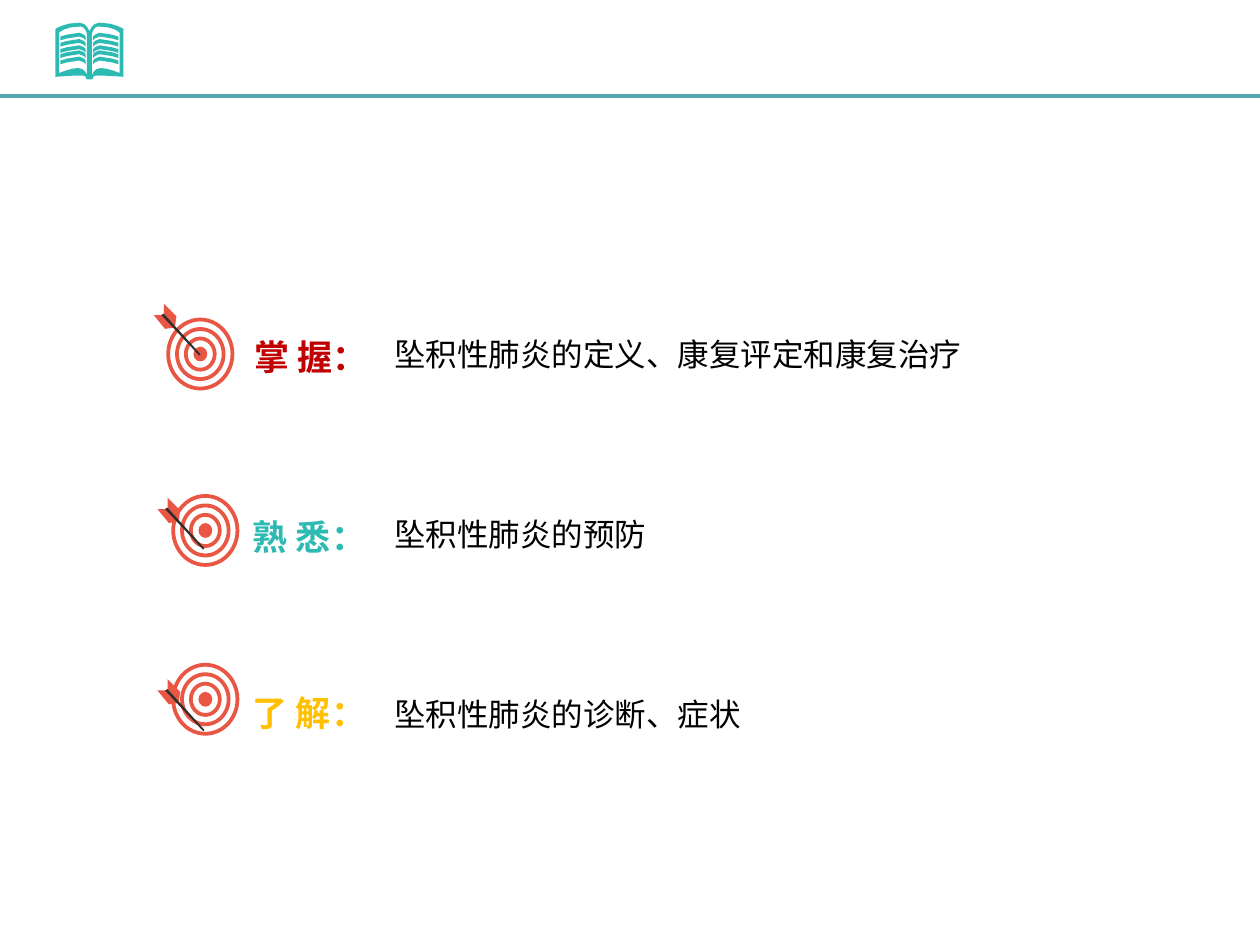
import math
from dataclasses import dataclass

from lxml import etree
from pptx import Presentation
from pptx import util as u
from pptx.dml.color import RGBColor
from pptx.enum import shapes, text
from pptx.oxml.ns import qn

Point = tuple[float, float]


@dataclass(frozen=True)
class Theme:
    font: str = "Noto Sans CJK SC"
    label_size: int = 20
    body_size: int = 18
    rule: str = "56A6AF"
    teal: str = "2CBAB2"
    target: str = "E95644"
    shaft: str = "2D2D2C"
    white: str = "FFFFFF"
    black: str = "000000"
    red: str = "C00000"
    amber: str = "FFC000"


@dataclass(frozen=True)
class Goal:
    label: str
    body: str
    color: str
    label_at: Point
    body_top: float
    body_width: float
    target_center: Point
    arrow_at: Point


THEME = Theme()
BODY_LEFT = 3.03
GOALS = [
    Goal("掌 握：", "坠积性肺炎的定义、康复评定和康复治疗", THEME.red,
         (1.92, 2.61), 2.61, 4.78, (1.59, 2.81), (1.22, 2.41)),
    Goal("熟 悉：", "坠积性肺炎的预防", THEME.teal,
         (1.91, 4.04), 4.04, 2.28, (1.63, 4.21), (1.25, 3.95)),
    Goal("了 解：", "坠积性肺炎的诊断、症状", THEME.amber,
         (1.91, 5.44), 5.47, 3.03, (1.63, 5.55), (1.25, 5.39)),
]

RING_WIDTHS = [0.54, 0.4, 0.26]
RING_THICKNESS = 0.03
DISC_WIDTH = 0.57
DOT_WIDTH = 0.11
TARGET_STRETCH = 1.07
FLETCHINGS = [
    [(0.17, 0.18), (0.08, 0.08), (0.08, 0), (0.18, 0.1)],
    [(0.17, 0.19), (0.07, 0.09), (0, 0.09), (0.09, 0.2)],
]
SHAFT = [(0.06, 0.09), (0.08, 0.08), (0.37, 0.4), (0.37, 0.41), (0.36, 0.41)]

# Right half of the book, x measured from its spine. After the start point,
# one point is a straight side and three points are a Bézier curve.
SPINE = 0.71
COVER = [(0, 0.25),
         ((0, 0.25), (0.02, 0.18), (0.08, 0.18)),
         ((0.2, 0.18), (0.27, 0.23), (0.27, 0.23)),
         ((0.27, 0.61),),
         ((0.27, 0.61), (0.15, 0.6), (0.07, 0.6)),
         ((0.05, 0.6), (0.04, 0.6), (0.03, 0.61)),
         ((0.03, 0.63), (0.02, 0.63), (0, 0.63))]
PAPER = [(0.02, 0.6),
         ((0.02, 0.6), (0.03, 0.54), (0.09, 0.54)),
         ((0.15, 0.54), (0.24, 0.58), (0.24, 0.58)),
         ((0.24, 0.26),),
         ((0.24, 0.26), (0.2, 0.21), (0.07, 0.21)),
         ((0.03, 0.21), (0.02, 0.27), (0.02, 0.27))]
PRINT_LINE = [(0.03, 0.03),
              ((0.03, 0.06),),
              ((0.03, 0.06), (0.05, 0.03), (0.08, 0.03)),
              ((0.14, 0.03), (0.23, 0.06), (0.23, 0.06)),
              ((0.23, 0.03),),
              ((0.23, 0.03), (0.14, 0), (0.08, 0)),
              ((0.05, 0), (0.03, 0.03), (0.03, 0.03))]
PRINT_TOPS = [0.26, 0.31, 0.36, 0.4, 0.45]


def flatten(outline: list, steps: int) -> list[Point]:
    """Turn straight sides and Bézier curves into a list of points."""
    points = [outline[0]]
    for segment in outline[1:]:
        if len(segment) == 1:
            points.append(segment[0])
            continue
        controls = (points[-1], *segment)
        for step in range(1, steps + 1):
            t = step / steps
            weights = [math.comb(3, i) * t**i * (1 - t)**(3 - i) for i in range(4)]
            points.append(tuple(sum(w * c[axis] for w, c in zip(weights, controls))
                                for axis in (0, 1)))
    return points


def shift(points: list[Point], offset: Point) -> list[Point]:
    return [(x + offset[0], y + offset[1]) for x, y in points]


def mirror(points: list[Point]) -> list[Point]:
    return [(-x, y) for x, y in points]


def paint(shape, color: str) -> None:
    shape.shadow.inherit = False
    shape.fill.solid()
    shape.fill.fore_color.rgb = RGBColor.from_string(color)
    shape.line.fill.background()


def add_outline(page, contours: list[list[Point]], color: str) -> None:
    """Draw all contours as one shape, so that inner ones cut holes."""
    scaled = [[(u.Inches(x), u.Inches(y)) for x, y in contour] for contour in contours]
    builder = page.shapes.build_freeform(*scaled[0][0])
    for index, contour in enumerate(scaled):
        if index:
            builder.move_to(*contour[0])
        builder.add_line_segments(contour[1:], close=True)
    paint(builder.convert_to_shape(), color)


def add_round(page, kind: shapes.MSO_SHAPE, center: Point, width: float, color: str):
    height = width * TARGET_STRETCH
    shape = page.shapes.add_shape(
        kind, u.Inches(center[0] - width / 2), u.Inches(center[1] - height / 2),
        u.Inches(width), u.Inches(height))
    paint(shape, color)
    return shape


def add_text(page, content: str, left: float, top: float, width: float,
             height: float, size: int, color: str, bold: bool = False) -> None:
    box = page.shapes.add_textbox(*map(u.Inches, (left, top, width, height)))
    frame = box.text_frame
    frame.text = content
    frame.word_wrap = False
    frame.auto_size = text.MSO_AUTO_SIZE.SHAPE_TO_FIT_TEXT
    span = frame.paragraphs[0].runs[0]
    span.font.name = THEME.font
    span.font.size = u.Pt(size)
    span.font.bold = bold
    span.font.color.rgb = RGBColor.from_string(color)
    etree.SubElement(span.font._element, qn("a:ea"), typeface=THEME.font)


def add_header(page) -> None:
    rule = page.shapes.add_connector(shapes.MSO_CONNECTOR.STRAIGHT, 0, u.Inches(0.76),
                                     u.Inches(10), u.Inches(0.76))
    rule.line.color.rgb = RGBColor.from_string(THEME.rule)
    rule.line.width = u.Pt(2)
    etree.SubElement(rule._element.spPr, qn("a:effectLst"))

    cover, paper = flatten(COVER, 4), flatten(PAPER, 4)
    stroke = flatten(PRINT_LINE, 2)
    half = [paper] + [shift(stroke, (0, top)) for top in PRINT_TOPS]
    book = [cover + mirror(cover)[::-1], *half, *map(mirror, half)]
    add_outline(page, [shift(part, (SPINE, 0)) for part in book], THEME.teal)


def add_target(page, center: Point, arrow_at: Point) -> None:
    add_round(page, shapes.MSO_SHAPE.OVAL, center, DISC_WIDTH, THEME.white)
    for width in RING_WIDTHS:
        ring = add_round(page, shapes.MSO_SHAPE.DONUT, center, width, THEME.target)
        ring.adjustments[0] = RING_THICKNESS / width
    add_round(page, shapes.MSO_SHAPE.OVAL, center, DOT_WIDTH, THEME.target)
    for fletching in FLETCHINGS:
        add_outline(page, [shift(fletching, arrow_at)], THEME.target)
    add_outline(page, [shift(SHAFT, arrow_at)], THEME.shaft)


def add_goal(page, goal: Goal) -> None:
    add_text(page, goal.body, BODY_LEFT, goal.body_top, goal.body_width, 0.4,
             THEME.body_size, THEME.black)
    add_target(page, goal.target_center, goal.arrow_at)
    add_text(page, goal.label, *goal.label_at, 1.13, 0.44,
             THEME.label_size, goal.color, bold=True)


def main() -> None:
    deck = Presentation()
    deck.slide_width, deck.slide_height = u.Inches(10), u.Inches(7.5)
    page = deck.slides.add_slide(deck.slide_layouts[6])
    add_header(page)
    for goal in GOALS:
        add_goal(page, goal)
    deck.save("out.pptx")


if __name__ == "__main__":
    main()
